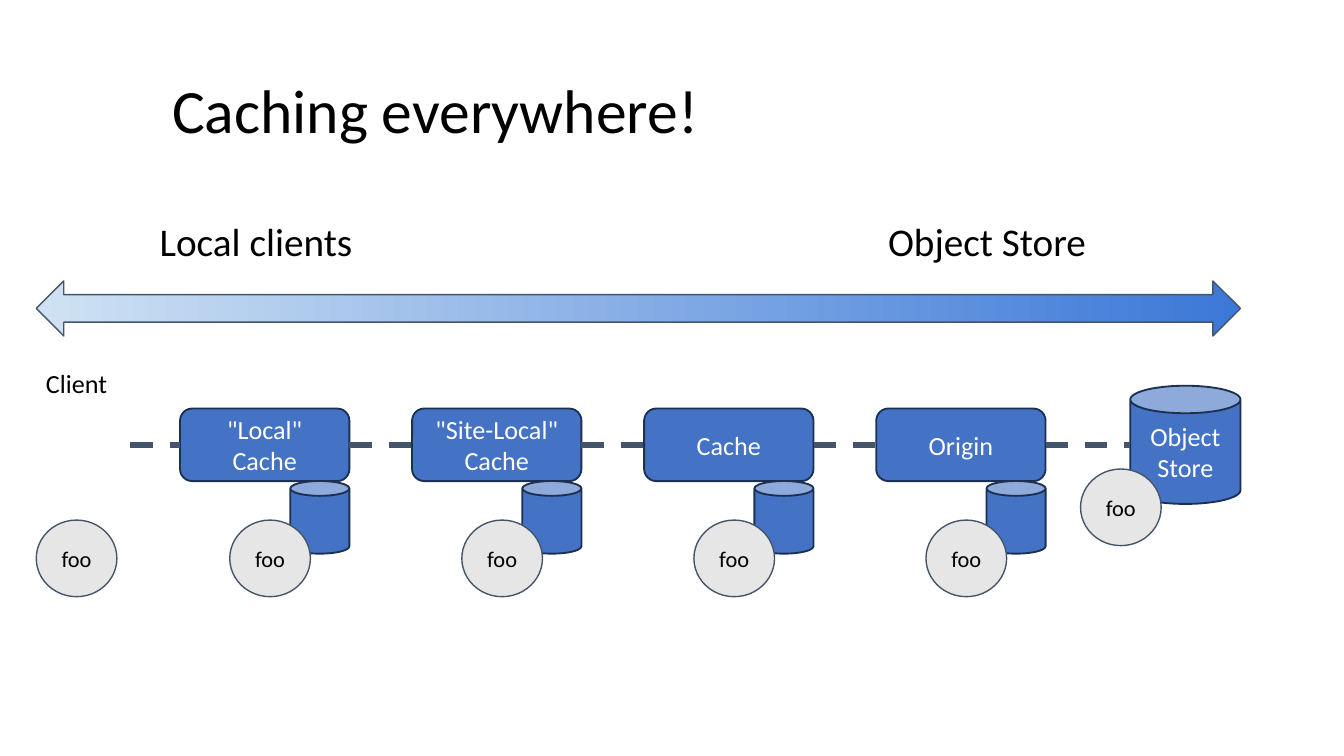
from dataclasses import dataclass

from lxml import etree
from pptx import Presentation
from pptx.dml.color import RGBColor
from pptx.enum.dml import MSO_LINE
from pptx.enum.shapes import MSO_CONNECTOR, MSO_SHAPE
from pptx.enum.text import MSO_ANCHOR, PP_ALIGN
from pptx.oxml.ns import qn
from pptx.util import Inches, Pt

STRAIGHT = MSO_CONNECTOR.STRAIGHT
ROUNDED, CAN = MSO_SHAPE.ROUNDED_RECTANGLE, MSO_SHAPE.CAN
OVAL, DOUBLE_ARROW = MSO_SHAPE.OVAL, MSO_SHAPE.LEFT_RIGHT_ARROW
DASH = MSO_LINE.DASH
TOP, MIDDLE = MSO_ANCHOR.TOP, MSO_ANCHOR.MIDDLE
LEFT, CENTER = PP_ALIGN.LEFT, PP_ALIGN.CENTER
LEFT_SIDE, RIGHT_SIDE = 1, 3


@dataclass(frozen=True)
class Theme:
    font: str = "Calibri"
    black: str = "000000"
    white: str = "FFFFFF"
    node: str = "4472C4"
    node_edge: str = "1C3052"
    item: str = "E7E6E6"
    slate: str = "44546A"
    gradient: tuple = ("CFE2F3", "3C78D8")
    title_size: float = 33
    heading_size: float = 21
    label_size: float = 14
    item_size: float = 12


THEME = Theme()
NODE_STYLE = {"fill": THEME.node, "edge": THEME.node_edge, "weight": 1}
ITEM_STYLE = {"fill": THEME.item, "edge": THEME.slate, "weight": 0.75}
NODE_MARGINS = (0.07, 0.04)
PLAIN_MARGINS = (0.1, 0.1)

SLIDE_WIDTH = 10
SLIDE_HEIGHT = SLIDE_WIDTH * 9 / 16
STAGES = ['"Local" Cache', '"Site-Local" Cache', "Cache", "Origin"]
FIRST_LEFT, LAST_LEFT = 1.34, 6.52
PITCH = (LAST_LEFT - FIRST_LEFT) / (len(STAGES) - 1)
STAGE_TOP, STAGE_WIDTH, STAGE_HEIGHT = 3.04, 1.26, 0.54
AXIS_Y = STAGE_TOP + STAGE_HEIGHT / 2
DISK_WIDTH = 0.44
ITEM_TOP = 3.87
STORE_LEFT = 8.41


def set_attributes(target, values):
    for name, value in values.items():
        setattr(target, name, value)


def write_text(shape, text, size, color, margins, anchor=MIDDLE, align=CENTER, spacing=1.0):
    horizontal, vertical = (Inches(margin) for margin in margins)
    frame = shape.text_frame
    set_attributes(frame, {
        "word_wrap": True, "vertical_anchor": anchor,
        "margin_left": horizontal, "margin_right": horizontal,
        "margin_top": vertical, "margin_bottom": vertical,
    })
    frame.text = text
    for paragraph in frame.paragraphs:
        set_attributes(paragraph, {"alignment": align, "line_spacing": spacing})
        set_attributes(paragraph.font, {"name": THEME.font, "size": Pt(size)})
        paragraph.font.color.rgb = RGBColor.from_string(color)


def add_label(slide, box, text, size, margins=PLAIN_MARGINS, **layout):
    label = slide.shapes.add_textbox(*map(Inches, box))
    write_text(label, text, size, THEME.black, margins, **layout)


def add_outlined(slide, kind, box, fill, edge, weight):
    """Add a preset shape; a pair of colours as fill makes a gradient."""
    shape = slide.shapes.add_shape(kind, *map(Inches, box))
    shape.shadow.inherit = False
    if isinstance(fill, tuple):
        shape.fill.gradient()
        shape.fill.gradient_angle = 0
        for stop, color in zip(shape.fill.gradient_stops, fill):
            stop.color.rgb = RGBColor.from_string(color)
    else:
        shape.fill.solid()
        shape.fill.fore_color.rgb = RGBColor.from_string(fill)
    shape.line.color.rgb = RGBColor.from_string(edge)
    shape.line.width = Pt(weight)
    return shape


def add_node(slide, kind, box, text):
    node = add_outlined(slide, kind, box, **NODE_STYLE)
    write_text(node, text, THEME.label_size, THEME.white, NODE_MARGINS)
    return node


def add_item(slide, left, top):
    """Add a cached object named foo."""
    item = add_outlined(slide, OVAL, (left, top, 0.6, 0.57), **ITEM_STYLE)
    write_text(item, "foo", THEME.item_size, THEME.black, PLAIN_MARGINS)


def add_link(slide, start, end, source=None, target=None):
    """Draw a dashed link on the axis, joined to the stages given."""
    link = slide.shapes.add_connector(
        STRAIGHT, Inches(start), Inches(AXIS_Y), Inches(end), Inches(AXIS_Y))
    if source is not None:
        link.begin_connect(source, RIGHT_SIDE)
    if target is not None:
        link.end_connect(target, LEFT_SIDE)
    link.line.color.rgb = RGBColor.from_string(THEME.slate)
    set_attributes(link.line, {"width": Pt(3), "dash_style": DASH})
    etree.SubElement(link._element.spPr, qn("a:effectLst"))


def add_stage(slide, left, text):
    """Add a cache stage with its disk and the object stored on it."""
    stage = add_node(slide, ROUNDED, (left, STAGE_TOP, STAGE_WIDTH, STAGE_HEIGHT), text)
    disk_left = left + STAGE_WIDTH - DISK_WIDTH
    disk_box = (disk_left, STAGE_TOP + STAGE_HEIGHT, DISK_WIDTH, STAGE_HEIGHT)
    add_outlined(slide, CAN, disk_box, **NODE_STYLE)
    add_item(slide, disk_left - 0.45, ITEM_TOP)
    return stage


def add_chain(slide):
    """Add the path from the client through the stages to the store."""
    start, previous = 0.97, None
    for index, text in enumerate(STAGES):
        left = FIRST_LEFT + index * PITCH
        stage = add_stage(slide, left, text)
        add_link(slide, start, left, previous, stage)
        start, previous = left + STAGE_WIDTH, stage
    add_node(slide, CAN, (STORE_LEFT, 2.87, 0.82, 0.88), "Object\nStore")
    add_link(slide, start, STORE_LEFT, previous)
    add_item(slide, 8.04, 3.49)


def main():
    presentation = Presentation()
    set_attributes(presentation, {
        "slide_width": Inches(SLIDE_WIDTH), "slide_height": Inches(SLIDE_HEIGHT),
    })
    slide = presentation.slides.add_slide(presentation.slide_layouts[6])

    add_label(slide, (1.21, 0.3, 8.11, 1.09), "Caching everywhere!", THEME.title_size,
              NODE_MARGINS, align=LEFT, spacing=0.9)
    for left, heading in ((0.97, "Local clients"), (6.41, "Object Store")):
        add_label(slide, (left, 1.52, 1.87, 0.57), heading, THEME.heading_size, anchor=TOP)
    add_outlined(slide, DOUBLE_ARROW, (0.27, 2.09, 8.96, 0.41),
                 THEME.gradient, THEME.slate, 0.75)
    add_label(slide, (0.1, 2.63, 0.94, 0.32), "Client", THEME.label_size, anchor=TOP)
    add_item(slide, 0.27, ITEM_TOP)
    add_chain(slide)

    presentation.save("out.pptx")


if __name__ == "__main__":
    main()
